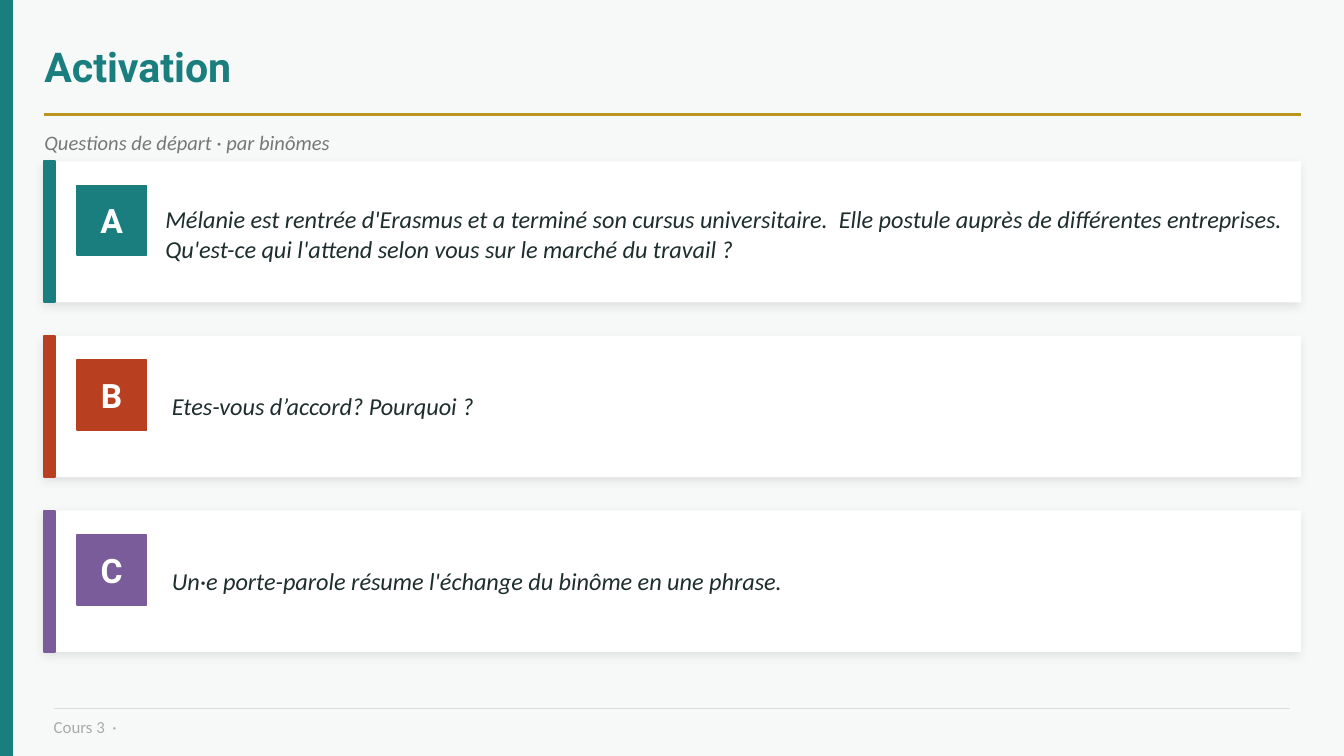
from lxml import etree
from pptx import Presentation
from pptx.dml.color import RGBColor
from pptx.enum.shapes import MSO_CONNECTOR as CONNECTOR, MSO_SHAPE as SHAPE
from pptx.enum.text import MSO_ANCHOR as ANCHOR, PP_ALIGN as ALIGN
from pptx.oxml import parse_xml
from pptx.oxml.ns import nsdecls, qn
from pptx.util import Inches, Pt

rgb = RGBColor.from_string
TEAL, RUST, PURPLE, GOLD = "1A7E7E", "B84020", "7A5C9A", "B89620"
WHITE, INK = "FFFFFF", "1E2D2D"

prs = Presentation()
prs.slide_width, prs.slide_height = Inches(10), Inches(5.625)
U = prs.slide_width / 100  # all lengths are percent of the slide width
HEIGHT = prs.slide_height / U
LEFT, WIDTH = 3.3, 93.5

s = prs.slides.add_slide(prs.slide_layouts[6])
s.background.fill.solid()
s.background.fill.fore_color.rgb = rgb("F7F9F9")


def add_rect(x, y, w, h, color, outlined=True):
    sp = s.shapes.add_shape(SHAPE.RECTANGLE, *(round(v * U) for v in (x, y, w, h)))
    sp.shadow.inherit = False
    sp.fill.solid()
    sp.fill.fore_color.rgb = rgb(color)
    if outlined:
        sp.line.color.rgb = rgb(color)
        sp.line.width = Pt(1)
    else:
        sp.line.fill.background()
    return sp


def add_text(x, y, w, h, lines, size, color, font="Calibri", bold=False,
             italic=False, align=ALIGN.LEFT):
    sp = s.shapes.add_textbox(*(round(v * U) for v in (x, y, w, h)))
    tf = sp.text_frame
    tf.word_wrap = True
    tf.vertical_anchor = ANCHOR.MIDDLE
    tf.margin_left = tf.margin_right = tf.margin_top = tf.margin_bottom = 0
    tf.text = "\n".join(lines)
    for p in tf.paragraphs:
        p.alignment = align
        p.font.name, p.font.size = font, Pt(size)
        p.font.bold, p.font.italic = bold, italic
        p.font.color.rgb = rgb(color)


# Side band, header and footer
add_rect(0, 0, 0.9, HEIGHT, TEAL)
add_text(LEFT, 2.2, WIDTH, 5.5, ["Activation"], 22, TEAL, "Roboto", bold=True)
add_text(LEFT, 9, WIDTH, 3.2, ["Questions de départ · par binômes"], 11, "777777",
         italic=True)
add_text(4, 53, 92, 2.2, ["Cours 3  ·"], 9, "AAAAAA")

for x, y, w, color, weight in [(LEFT, 8.5, WIDTH, GOLD, 1.5),
                               (4, 52.7, 92, "DDDDDD", 0.75)]:
    rule = s.shapes.add_connector(
        CONNECTOR.STRAIGHT, *(round(v * U) for v in (x, y, x + w, y)))
    rule.line.color.rgb = rgb(color)
    rule.line.width = Pt(weight)
    etree.SubElement(rule._element.spPr, qn("a:effectLst"))

# Question cards: letter, colour, lines, text box relative to the card's top
CARD_TOP, CARD_HEIGHT, PITCH, BADGE = 12, 10.5, 13, 5.2
cards = [
    ("A", TEAL,
     ["Mélanie est rentrée d'Erasmus et a terminé son cursus universitaire.  "
      "Elle postule auprès de différentes entreprises.",
      "Qu'est-ce qui l'attend selon vous sur le marché du travail ?"],
     (12.3, 1.7, 84.5, 7.4)),
    ("B", RUST, ["Etes-vous d’accord? Pourquoi ?"], (12.8, 2.2, 82, 6)),
    ("C", PURPLE, ["Un·e porte-parole résume l'échange du binôme en une phrase."],
     (12.8, 2.2, 82, 6)),
]
for row, (letter, color, lines, (x, dy, w, h)) in enumerate(cards):
    top = CARD_TOP + row * PITCH
    card = add_rect(LEFT, top, WIDTH, CARD_HEIGHT, WHITE, outlined=False)
    effects = card._element.spPr.find(qn("a:effectLst"))
    effects.append(parse_xml(
        f'<a:outerShdw {nsdecls("a")} blurRad="{Pt(5)}" dist="{Pt(2)}" '
        f'dir="{135 * 60000}" algn="bl" rotWithShape="0">'
        '<a:srgbClr val="000000"><a:alpha val="9000"/></a:srgbClr></a:outerShdw>'))
    add_rect(LEFT, top, 0.8, CARD_HEIGHT, color)
    badge = (5.7, top + 1.8, BADGE, BADGE)
    add_rect(*badge, color)
    add_text(*badge, [letter], 18, WHITE, "Roboto", bold=True, align=ALIGN.CENTER)
    add_text(x, top + dy, w, h, lines, 13, INK, italic=True)

prs.save("out.pptx")
